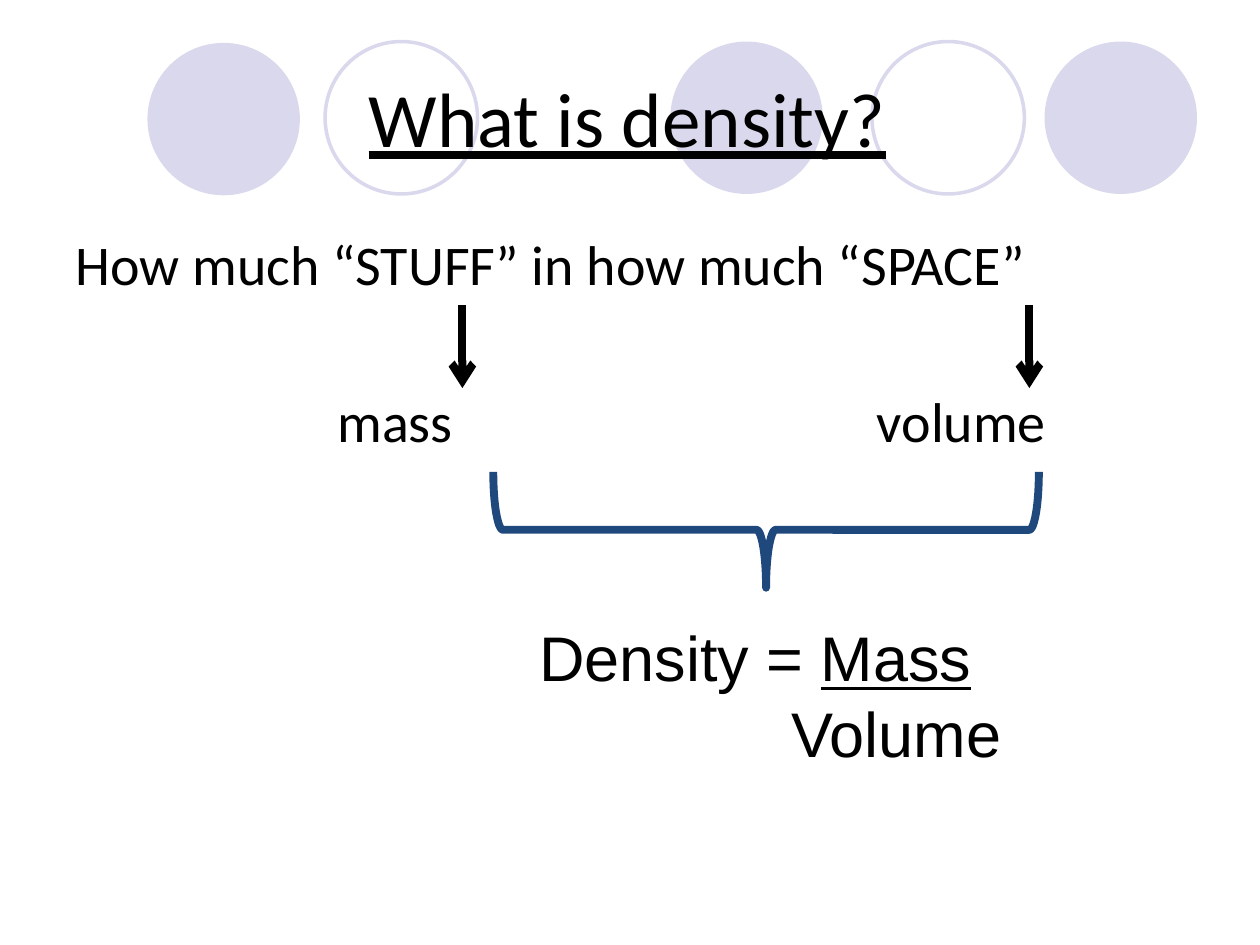
from lxml.etree import SubElement
from pptx import Presentation
from pptx.dml.color import RGBColor
from pptx.enum.shapes import MSO_CONNECTOR, MSO_SHAPE
from pptx.enum.text import MSO_ANCHOR, PP_ALIGN
from pptx.oxml.ns import qn
from pptx.util import Inches, Pt

BLACK, LAVENDER, NAVY = "000000", "D9D8EC", "1F497D"
CIRCLE_SIZE = 1.21
FILLED_CIRCLES = [(5.32, 0.33), (8.29, 0.33), (1.17, 0.34)]
OUTLINED_CIRCLES = [(6.92, 0.33), (2.58, 0.33)]
ARROW_POSITIONS = [3.67, 8.17]
HEADING = {"name": "Calibri", "size": Pt(44), "underline": True}
BODY = {"name": "Calibri", "size": Pt(32)}
FORMULA = {"name": "Arial", "size": Pt(36)}


def color(value):
    """Return the colour for a hex string."""
    return RGBColor.from_string(value)


def set_line(shape, value, width):
    """Give a shape or connector its line colour and width."""
    shape.line.color.rgb = color(value)
    shape.line.width = Pt(width)


def add_outline(slide, kind, left, top, width, height, value, weight):
    """Add an unfilled preset shape."""
    shape = slide.shapes.add_shape(
        kind, Inches(left), Inches(top), Inches(width), Inches(height))
    shape.shadow.inherit = False
    shape.fill.background()
    set_line(shape, value, weight)
    return shape


def add_circle(slide, left, top, filled):
    """Add one decorative circle, filled or outlined."""
    circle = add_outline(slide, MSO_SHAPE.OVAL, left, top,
                         CIRCLE_SIZE, CIRCLE_SIZE, LAVENDER, 2)
    if filled:
        circle.fill.solid()
        circle.fill.fore_color.rgb = color(LAVENDER)
        circle.line.fill.background()


def add_run(paragraph, text, formats):
    """Add a black run with the given font values."""
    run = paragraph.add_run()
    run.text = text
    run.font.color.rgb = color(BLACK)
    for name, value in formats.items():
        setattr(run.font, name, value)


def add_text_box(slide, left, top, width, height):
    """Add a wrapping text box and return its frame."""
    frame = slide.shapes.add_textbox(
        Inches(left), Inches(top), Inches(width), Inches(height)).text_frame
    frame.word_wrap = True
    return frame


def add_label(slide, text, left, top, width):
    """Add one line of body text."""
    frame = add_text_box(slide, left, top, width, 0.65)
    add_run(frame.paragraphs[0], text, BODY)


def add_title(slide):
    """Add the centred, underlined title."""
    frame = add_text_box(slide, 0.5, 0.3, 9, 1.25)
    frame.margin_right = Inches(0.14)
    frame.vertical_anchor = MSO_ANCHOR.MIDDLE
    frame.paragraphs[0].alignment = PP_ALIGN.CENTER
    add_run(frame.paragraphs[0], "What is density?", HEADING)


def add_down_arrow(slide, x):
    """Add a thick arrow from a phrase to its quantity."""
    arrow = slide.shapes.add_connector(
        MSO_CONNECTOR.STRAIGHT, Inches(x), Inches(2.42), Inches(x), Inches(3.08))
    set_line(arrow, BLACK, 4.5)
    SubElement(arrow.line._get_or_add_ln(), qn("a:tailEnd"), type="arrow")
    SubElement(arrow._element.spPr, qn("a:effectLst"))


def add_formula(slide):
    """Add the density formula with the divisor below the dividend."""
    frame = add_text_box(slide, 4.18, 4.86, 5.16, 1.3)
    dividend = frame.paragraphs[0]
    add_run(dividend, "Density = ", FORMULA)
    add_run(dividend, "Mass", {**FORMULA, "underline": True})
    divisor = frame.add_paragraph()
    divisor._p.get_or_add_pPr().set("marL", str(Inches(2)))
    add_run(divisor, "Volume", FORMULA)


def main():
    """Build the density slide."""
    presentation = Presentation()
    presentation.slide_width, presentation.slide_height = Inches(10), Inches(7.5)
    slide = presentation.slides.add_slide(presentation.slide_layouts[6])
    for positions, filled in ((FILLED_CIRCLES, True), (OUTLINED_CIRCLES, False)):
        for left, top in positions:
            add_circle(slide, left, top, filled)
    add_title(slide)
    add_label(slide, "How much “STUFF” in how much “SPACE”", 0.5, 1.77, 9.33)
    add_label(slide, "mass", 2.58, 3.02, 1.5)
    add_label(slide, "volume", 6.86, 3.02, 2)
    for x in ARROW_POSITIONS:
        add_down_arrow(slide, x)
    brace = add_outline(slide, MSO_SHAPE.RIGHT_BRACE, 5.62, 2.04, 0.92, 4.33, NAVY, 4.5)
    brace.rotation = 90
    add_formula(slide)
    presentation.save("out.pptx")


if __name__ == "__main__":
    main()
